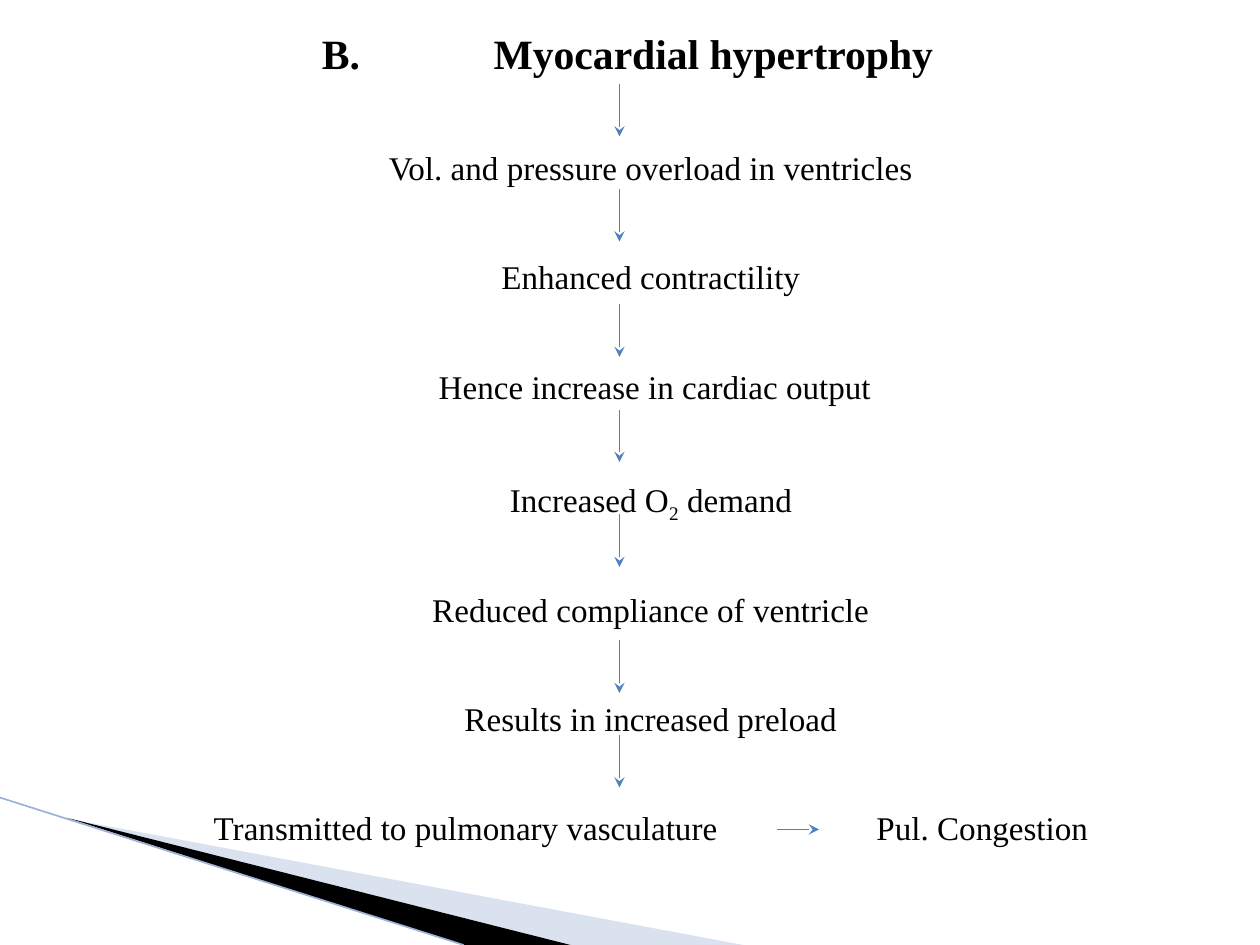
from lxml.etree import SubElement
from pptx import Presentation
from pptx.dml.color import RGBColor
from pptx.enum.shapes import MSO_CONNECTOR
from pptx.enum.text import MSO_ANCHOR, MSO_AUTO_SIZE, PP_ALIGN
from pptx.oxml.ns import qn
from pptx.util import Inches, Pt

BLACK = RGBColor(0x00, 0x00, 0x00)
WEDGE_BLUE = RGBColor(0xA4, 0xB8, 0xDA)
EDGE_BLUE = RGBColor(0x9C, 0xB2, 0xD5)
ARROW_BLUE = RGBColor(0x4F, 0x81, 0xBD)

HEADING = "B.\t\t Myocardial hypertrophy"
STEPS = [
    ["Vol. and pressure overload in ventricles "],
    ["Enhanced contractility "],
    ["Hence increase in cardiac output"],
    ["Increased O", "2", " demand "],
    ["Reduced compliance of ventricle "],
    ["Results in increased preload "],
    ["Transmitted to pulmonary vasculature\t\t\tPul. Congestion "],
]
HEADING_HANG, STEP_HANG = 0.28, 0.26
HEADING_RIGHT_MARGIN = 0.44

GRID = 1 / 12
ARROW_COLUMN, ARROW_ROWS = 59, 5
ARROW_TOP_ROWS = [8, 18, 29, 39, 49, 61, 70]
SIDE_ARROW = (74, 79, 78, 79)

WEDGES = [
    ([(0.55, 6.5), (5.9, 7.5), (4.53, 7.5)], WEDGE_BLUE, 40),
    ([(0.53, 6.49), (4.53, 7.5), (3.68, 7.5)], BLACK, 100),
]
EDGE = (0, 6.33, 3.68, 7.5)


def add_wedge(slide, points, color, opacity):
    builder = slide.shapes.build_freeform(*map(Inches, points[0]), scale=1.0)
    builder.add_line_segments([tuple(map(Inches, point)) for point in points[1:]])
    wedge = builder.convert_to_shape()
    wedge.shadow.inherit = False
    wedge.fill.solid()
    wedge.fill.fore_color.rgb = color
    color_element = wedge._element.spPr.find(qn("a:solidFill"))[0]
    SubElement(color_element, qn("a:alpha"), val=str(opacity * 1000))
    wedge.line.fill.background()


def add_line(slide, ends, color, width):
    line = slide.shapes.add_connector(MSO_CONNECTOR.STRAIGHT, *map(Inches, ends))
    line.line.color.rgb = color
    line.line.width = Pt(width)
    SubElement(line._element.spPr, qn("a:effectLst"))
    return line


def add_arrow(slide, cells):
    arrow = add_line(slide, [cell * GRID for cell in cells], ARROW_BLUE, 0.79)
    outline = arrow._element.spPr.find(qn("a:ln"))
    SubElement(outline, qn("a:tailEnd"), type="stealth")


def format_paragraph(paragraph, hang, size, bold=False, right_margin=0):
    properties = paragraph._p.get_or_add_pPr()
    properties.set("marL", str(Inches(hang)))
    properties.set("marR", str(Inches(right_margin)))
    properties.set("indent", str(-Inches(hang)))
    SubElement(properties, qn("a:buNone"))
    paragraph.alignment = PP_ALIGN.CENTER
    paragraph.line_spacing = 0.8
    paragraph.font.name = "Times New Roman"
    paragraph.font.size = Pt(size)
    paragraph.font.bold = bold
    paragraph.font.color.rgb = BLACK


def fill_body(body):
    body.left, body.top, body.width, body.height = map(Inches, (0.9, 0.25, 8.6, 6.67))
    frame = body.text_frame
    frame.word_wrap = True
    frame.auto_size = MSO_AUTO_SIZE.NONE
    frame.vertical_anchor = MSO_ANCHOR.TOP
    heading = frame.paragraphs[0]
    heading.add_run().text = HEADING
    format_paragraph(heading, HEADING_HANG, 23.8, True, HEADING_RIGHT_MARGIN)
    heading.space_before = Pt(0)
    for parts in STEPS:
        paragraph = frame.add_paragraph()
        for part in parts:
            run = paragraph.add_run()
            run.text = part
            if part == "2":
                run.font._element.set("baseline", "-25000")
        format_paragraph(paragraph, STEP_HANG, 18.9)
        paragraph.space_before = Pt(44.3)


def main():
    presentation = Presentation()
    presentation.slide_width, presentation.slide_height = Inches(10), Inches(7.5)
    slide = presentation.slides.add_slide(presentation.slide_layouts[1])
    title = slide.shapes.title._element
    title.getparent().remove(title)
    body = slide.placeholders[1]

    for points, color, opacity in WEDGES:
        add_wedge(slide, points, color, opacity)
    add_line(slide, EDGE, EDGE_BLUE, 0.95)
    slide.shapes._spTree.append(body._element)
    fill_body(body)
    for row in ARROW_TOP_ROWS:
        add_arrow(slide, (ARROW_COLUMN, row, ARROW_COLUMN, row + ARROW_ROWS))
    add_arrow(slide, SIDE_ARROW)
    presentation.save("out.pptx")


if __name__ == "__main__":
    main()
